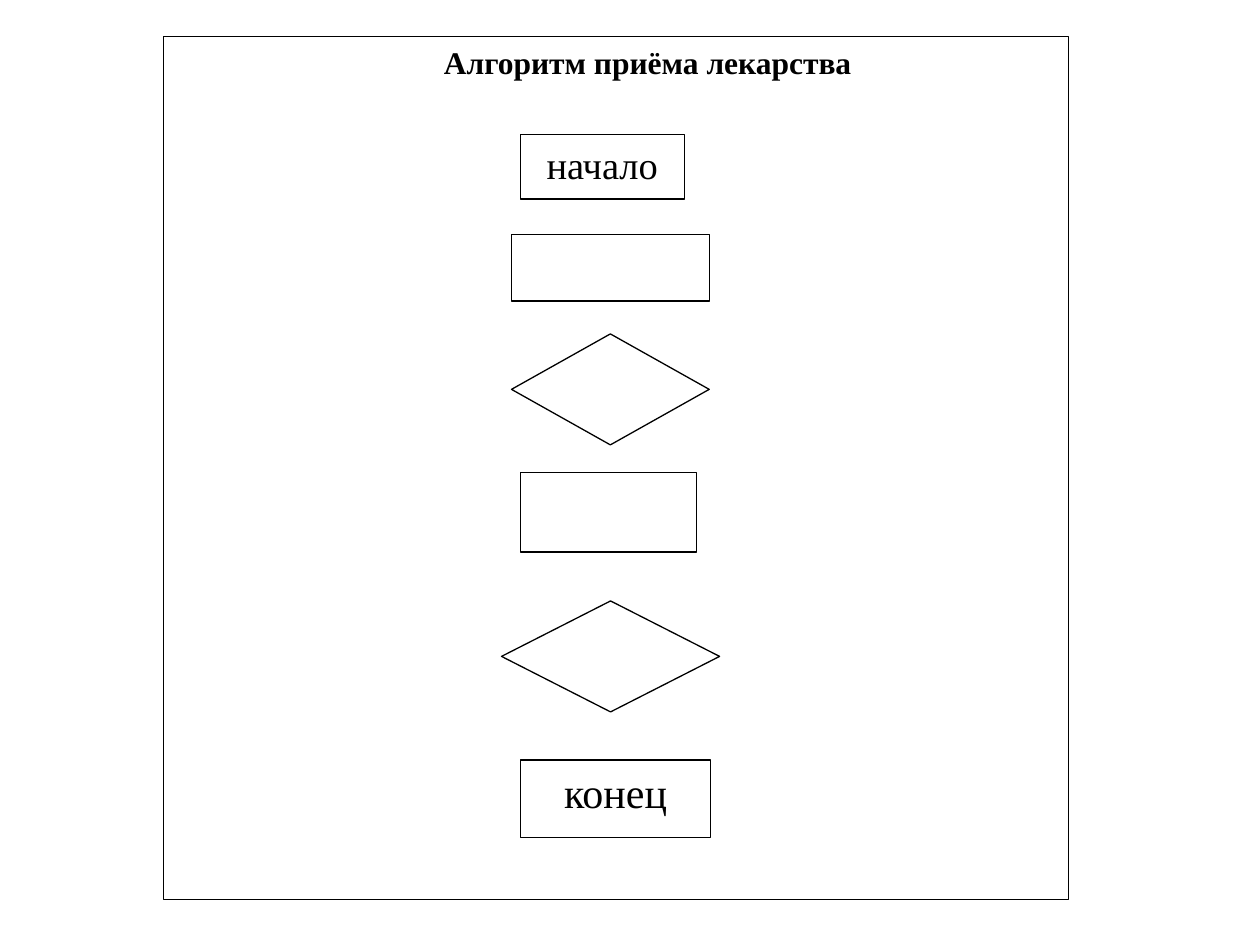
from pptx import Presentation
from pptx.dml.color import RGBColor
from pptx.enum.shapes import MSO_SHAPE
from pptx.enum.text import MSO_ANCHOR, PP_ALIGN
from pptx.util import Pt

RECT, RHOMB = MSO_SHAPE.RECTANGLE, MSO_SHAPE.DIAMOND
TOP, CENTER = MSO_ANCHOR.TOP, PP_ALIGN.CENTER
BLACK = RGBColor(0, 0, 0)
WHITE = RGBColor(255, 255, 255)
FONT = "Times New Roman"

FRAME = (RECT, 93.6, 20.9, 517, 493.2, "Алгоритм приёма лекарства", 18)
STEPS = [
    (RECT, 297.4, 77, 93.6, 36.7, "начало", 22),
    (RECT, 292.3, 133.9, 113, 38.2, "", 0),
    (RHOMB, 292.3, 190.8, 113, 63.4, "", 0),
    (RECT, 297.4, 270, 100.8, 45.4, "", 0),
    (RHOMB, 286.6, 343.4, 124.6, 63.4, "", 0),
    (RECT, 297.4, 434.2, 108.7, 44.6, "конец", 24),
]


def draw(slide, kind, left, top, width, height, text, size):
    box = slide.shapes.add_shape(kind, Pt(left), Pt(top), Pt(width), Pt(height))
    box.shadow.inherit = False
    box.fill.solid()
    box.fill.fore_color.rgb = WHITE
    box.line.color.rgb = BLACK
    box.line.width = Pt(0.75)
    if text:
        frame = box.text_frame
        frame.text = text
        frame.vertical_anchor = TOP
        para = frame.paragraphs[0]
        para.alignment = CENTER
        para.space_after = Pt(10)
        font = para.runs[0].font
        font.name = FONT
        font.size = Pt(size)
        font.color.rgb = BLACK
    return box


def main():
    deck = Presentation()
    deck.slide_width, deck.slide_height = Pt(720), Pt(540)
    slide = deck.slides.add_slide(deck.slide_layouts[6])
    title = draw(slide, *FRAME).text_frame.paragraphs[0]
    title.level = 1
    title.runs[0].font.bold = True
    props = title._p.get_or_add_pPr()
    props.set("marL", str(Pt(36)))
    props.set("indent", "0")
    for step in STEPS:
        draw(slide, *step)
    deck.save("out.pptx")


if __name__ == "__main__":
    main()
